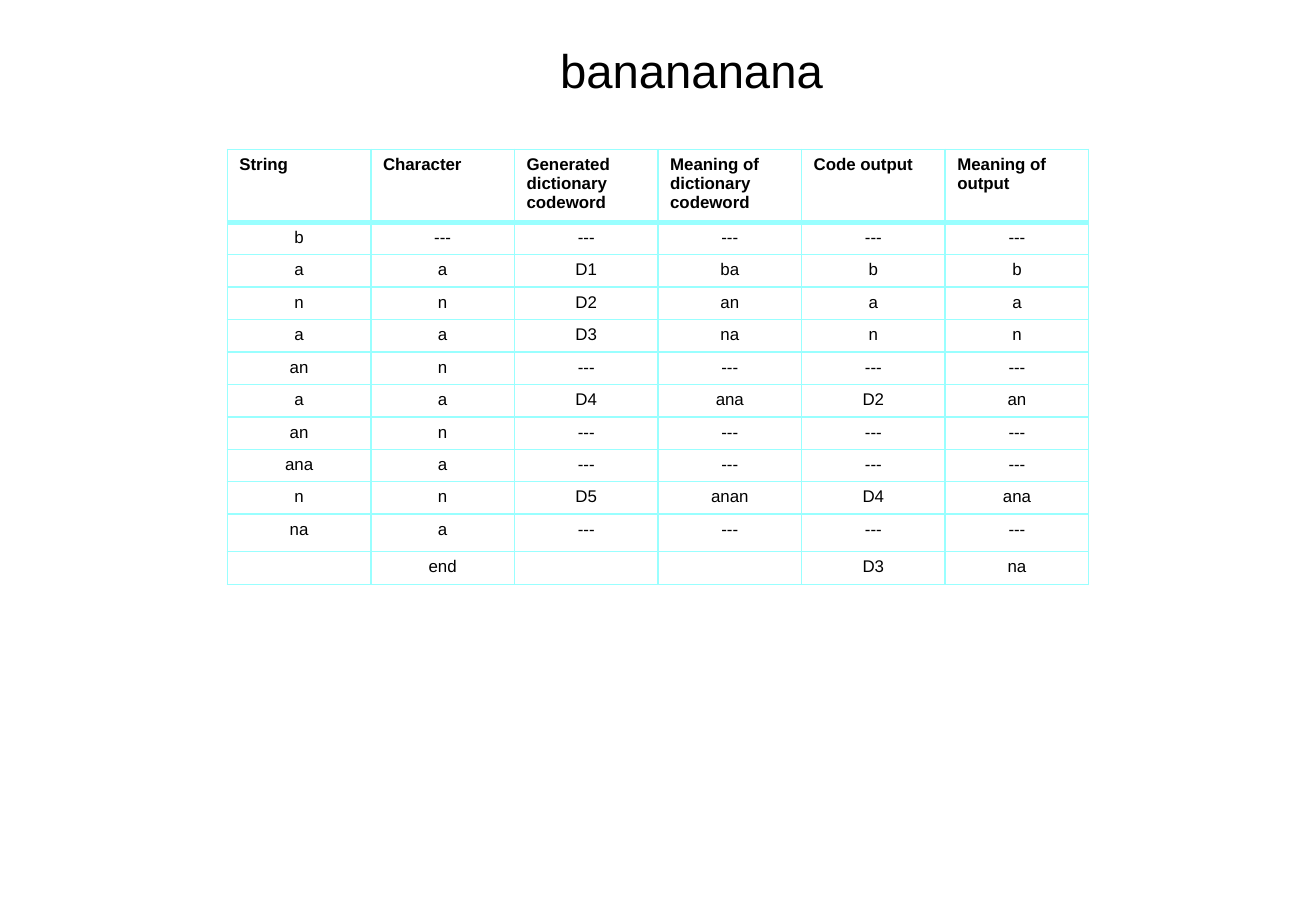
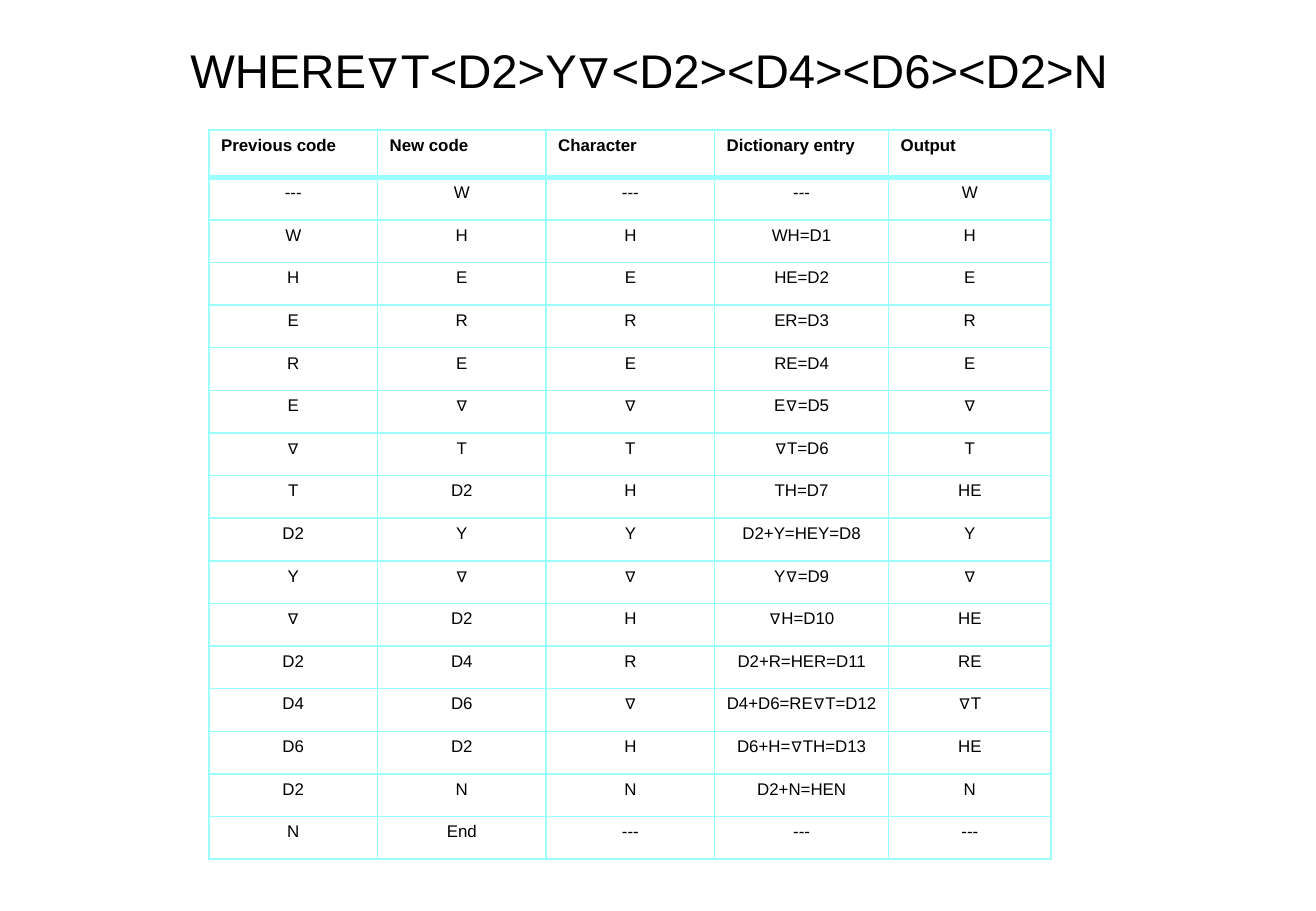
"""Two slides that trace dictionary coding and decoding in bordered tables."""
import dataclasses
import typing

import lxml.etree
import pptx
import pptx.dml.color
import pptx.enum.text
import pptx.oxml.ns
import pptx.util

ALIGN = pptx.enum.text.PP_ALIGN
ANCHOR = pptx.enum.text.MSO_ANCHOR


@dataclasses.dataclass(frozen=True)
class Theme:
    """Colours, type sizes, line widths and slide size."""
    width: float = 10.83
    height: float = 7.5
    font: str = "Arial"
    ink: str = "000000"
    paper: str = "FFFFFF"
    border: str = "99FFFF"
    title_size: int = 28
    cell_size: int = 10
    thin: int = 1
    thick: int = 3


@dataclasses.dataclass(frozen=True)
class Trace:
    """A titled table, with lengths in percent of the slide's size."""
    title: str
    title_left: float
    title_width: float
    left: float
    top: float
    col_widths: list[float]
    row_heights: list[float]
    rows: str


THEME = Theme()
TITLE_TOP, TITLE_HEIGHT = 3.87, 7.6

TRACES = [
    Trace("banananana", 24.56, 55.96, 17.27, 16.4,
          [10.91] * 6, [8.0] + [3.56] * 9 + [4.13, 3.56],
          """String|Character|Generated dictionary codeword|Meaning of dictionary codeword|Code output|Meaning of output
b|---|---|---|---|---
a|a|D1|ba|b|b
n|n|D2|an|a|a
a|a|D3|na|n|n
an|n|---|---|---|---
a|a|D4|ana|D2|an
an|n|---|---|---|---
ana|a|---|---|---|---
n|n|D5|anan|D4|ana
na|a|---|---|---|---
|end|||D3|na"""),
    Trace("WHERE∇T<D2>Y∇<D2><D4><D6><D2>N", 9.33, 79.96, 15.88, 14.27,
          [12.81] * 3 + [13.22, 12.35], [5.2] + [4.68] * 16,
          """Previous code|New code|Character|Dictionary entry|Output
---|W|---|---|W
W|H|H|WH=D1|H
H|E|E|HE=D2|E
E|R|R|ER=D3|R
R|E|E|RE=D4|E
E|∇|∇|E∇=D5|∇
∇|T|T|∇T=D6|T
T|D2|H|TH=D7|HE
D2|Y|Y|D2+Y=HEY=D8|Y
Y|∇|∇|Y∇=D9|∇
∇|D2|H|∇H=D10|HE
D2|D4|R|D2+R=HER=D11|RE
D4|D6|∇|D4+D6=RE∇T=D12|∇T
D6|D2|H|D6+H=∇TH=D13|HE
D2|N|N|D2+N=HEN|N
N|End|---|---|---"""),
]


def across(share: float) -> int:
    """Return a percentage of the slide's width."""
    return pptx.util.Inches(THEME.width * share / 100)


def down(share: float) -> int:
    """Return a percentage of the slide's height."""
    return pptx.util.Inches(THEME.height * share / 100)


def rgb(value: str) -> pptx.dml.color.RGBColor:
    """Return the colour for a hex value."""
    return pptx.dml.color.RGBColor.from_string(value)


def write(tf: typing.Any, text: str, *, size: int, bold: bool = False,
          align: ALIGN = ALIGN.CENTER) -> None:
    """Put one formatted paragraph in a text frame."""
    p = tf.paragraphs[0]
    p.alignment = align
    if not text:
        lxml.etree.SubElement(p._p, pptx.oxml.ns.qn("a:endParaRPr"), sz=str(size * 100))
        return
    r = p.add_run()
    r.text = text
    r.font.name = THEME.font
    r.font.size = pptx.util.Pt(size)
    r.font.bold = bold
    r.font.color.rgb = rgb(THEME.ink)


def set_borders(cell: typing.Any, top: int, bottom: int) -> None:
    """Draw the four borders of a cell, thin at the sides."""
    sides = {"lnL": THEME.thin, "lnR": THEME.thin, "lnT": top, "lnB": bottom}
    tc_pr = cell._tc.get_or_add_tcPr()
    for i, (side, width) in enumerate(sides.items()):
        ln = lxml.etree.Element(pptx.oxml.ns.qn(f"a:{side}"), w=str(pptx.util.Pt(width)))
        fill = lxml.etree.SubElement(ln, pptx.oxml.ns.qn("a:solidFill"))
        lxml.etree.SubElement(fill, pptx.oxml.ns.qn("a:srgbClr"), val=THEME.border)
        tc_pr.insert(i, ln)


def add_title(s: typing.Any, trace: Trace) -> None:
    """Place and format the slide's title."""
    sp = s.shapes.title
    sp.left, sp.width = across(trace.title_left), across(trace.title_width)
    sp.top, sp.height = down(TITLE_TOP), down(TITLE_HEIGHT)
    tf = sp.text_frame
    tf.word_wrap = True
    tf.auto_size = pptx.enum.text.MSO_AUTO_SIZE.NONE
    tf.vertical_anchor = ANCHOR.MIDDLE
    write(tf, trace.title, size=THEME.title_size)


def add_trace_table(s: typing.Any, trace: Trace) -> None:
    """Add the table with a heavy rule under its header."""
    rows = [line.split("|") for line in trace.rows.splitlines()]
    table = s.shapes.add_table(
        len(rows), len(trace.col_widths), across(trace.left), down(trace.top),
        across(sum(trace.col_widths)), down(sum(trace.row_heights))).table
    table.first_row = table.horz_banding = False
    for col, width in zip(table.columns, trace.col_widths):
        col.width = across(width)
    for i, (row, height) in enumerate(zip(table.rows, trace.row_heights)):
        row.height = down(height)
        header = i == 0
        for cell, text in zip(row.cells, rows[i]):
            cell.vertical_anchor = ANCHOR.TOP
            cell.fill.solid()
            cell.fill.fore_color.rgb = rgb(THEME.paper)
            set_borders(cell, THEME.thick if i == 1 else THEME.thin,
                        THEME.thick if header else THEME.thin)
            write(cell.text_frame, text, size=THEME.cell_size, bold=header,
                  align=ALIGN.LEFT if header else ALIGN.CENTER)


def main() -> None:
    """Build and save the presentation."""
    prs = pptx.Presentation()
    prs.slide_width, prs.slide_height = across(100), down(100)
    for trace in TRACES:
        s = prs.slides.add_slide(prs.slide_layouts[5])
        add_title(s, trace)
        add_trace_table(s, trace)
    prs.save("out.pptx")


if __name__ == "__main__":
    main()
